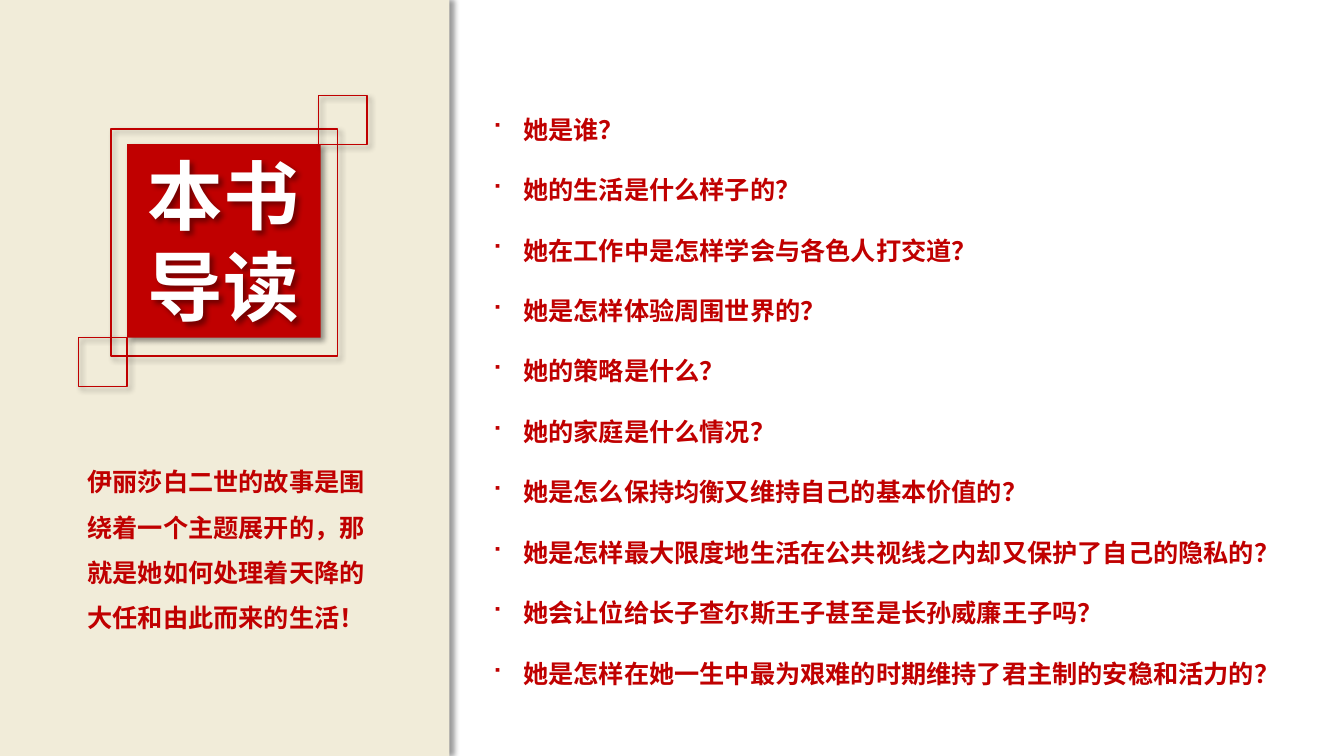
from dataclasses import dataclass

from lxml.etree import SubElement
from pptx import Presentation
from pptx.dml.color import RGBColor
from pptx.enum.shapes import MSO_SHAPE
from pptx.enum.text import MSO_AUTO_SIZE
from pptx.oxml.ns import qn
from pptx.util import Pt


@dataclass(frozen=True)
class Theme:
    red: RGBColor = RGBColor(0xC0, 0x00, 0x00)
    cream: RGBColor = RGBColor(0xF1, 0xEC, 0xD9)
    white: RGBColor = RGBColor(0xFF, 0xFF, 0xFF)
    shadow: str = "000000"
    font: str = "Noto Sans CJK SC"
    title: int = 54
    body: int = 18


theme = Theme()


def add_shadow(s, angle=45):
    """Give the shape a soft outer shadow cast at the angle in degrees."""
    effects = s._element.spPr.get_or_add_effectLst() if hasattr(
        s._element.spPr, "get_or_add_effectLst") else SubElement(s._element.spPr, qn("a:effectLst"))
    outer = SubElement(effects, qn("a:outerShdw"), blurRad=str(Pt(4)), dist=str(Pt(3)),
                       dir=str(angle * 60000), algn="tl", rotWithShape="0")
    color = SubElement(outer, qn("a:srgbClr"), val=theme.shadow)
    SubElement(color, qn("a:alpha"), val="40000")


def add_text(shapes, lines, box, size=theme.body, color=theme.red, spacing=1.0,
             wrap=True, bullet=None, indent=22.5):
    s = shapes.add_textbox(*map(Pt, box))
    tf = s.text_frame
    tf.word_wrap = wrap
    tf.auto_size = MSO_AUTO_SIZE.SHAPE_TO_FIT_TEXT
    for i, line in enumerate(lines):
        p = tf.paragraphs[0] if i == 0 else tf.add_paragraph()
        p.line_spacing = spacing
        if bullet:
            pPr = p._p.get_or_add_pPr()
            pPr.set("marL", str(Pt(indent)))
            pPr.set("indent", str(-Pt(indent)))
            SubElement(pPr, qn("a:buFont"), typeface="Wingdings")
            SubElement(pPr, qn("a:buChar"), char=bullet)
        r = p.add_run()
        r.text = line
        r.font.size = Pt(size)
        r.font.bold = True
        r.font.color.rgb = color
        r.font.name = theme.font
        rPr = r._r.get_or_add_rPr()
        rPr.set("lang", "zh-CN")
        SubElement(rPr, qn("a:ea"), typeface=theme.font)
    return s


prs = Presentation()
prs.slide_width, prs.slide_height = Pt(960), Pt(540)
slide = prs.slides.add_slide(prs.slide_layouts[6])

# Side panel
panel = slide.shapes.add_shape(MSO_SHAPE.RECTANGLE, 0, 0, Pt(321), Pt(540))
panel.shadow.inherit = False
panel.fill.solid()
panel.fill.fore_color.rgb = theme.cream
panel.line.fill.background()
add_shadow(panel, angle=0)

# Title emblem: a filled square, a frame around it and two corner squares
emblem = slide.shapes.add_group_shape().shapes
for left, top, side, filled in [
    (90.8, 103, 138.2, True),
    (79.2, 92.2, 162, False),
    (227.5, 68.4, 34.8, False),
    (56, 241.2, 34.8, False),
]:
    s = emblem.add_shape(MSO_SHAPE.RECTANGLE, Pt(left), Pt(top), Pt(side), Pt(side))
    s.shadow.inherit = False
    if filled:
        s.fill.solid()
        s.fill.fore_color.rgb = theme.red
        s.line.fill.background()
    else:
        s.fill.background()
        s.line.color.rgb = theme.red
        s.line.width = Pt(1)
    add_shadow(s)
title = add_text(emblem, ["本书", "导读"], (98.6, 103, 122.4, 136.8),
                 size=theme.title, color=theme.white, wrap=False)
add_shadow(title)

add_text(slide.shapes,
         ["伊丽莎白二世的故事是围绕着一个主题展开的，那就是她如何处理着天降的大任和由此而来的生活！"],
         (55.4, 319, 227.5, 136.8), spacing=1.5)

questions = [
    "她是谁？",
    "她的生活是什么样子的？",
    "她在工作中是怎样学会与各色人打交道？",
    "她是怎样体验周围世界的？",
    "她的策略是什么？",
    "她的家庭是什么情况？",
    "她是怎么保持均衡又维持自己的基本价值的？",
    "她是怎样最大限度地生活在公共视线之内却又保护了自己的隐私的？",
    "她会让位给长子查尔斯王子甚至是长孙威廉王子吗？",
    "她是怎样在她一生中最为艰难的时期维持了君主制的安稳和活力的？",
]
add_text(slide.shapes, questions, (344.2, 56.2, 576.7, 439.2),
         spacing=2.0, wrap=False, bullet="■")

prs.save("out.pptx")
